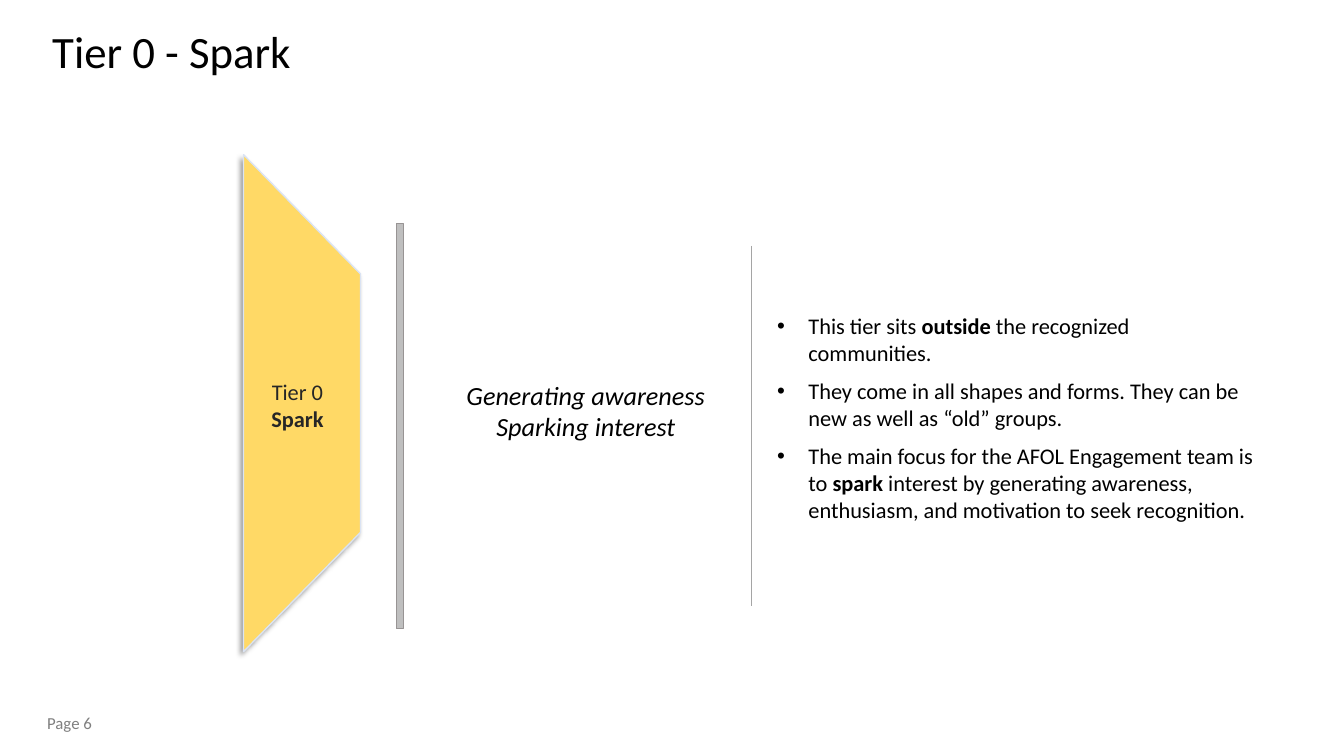
from lxml.etree import SubElement
from pptx import Presentation
from pptx.dml.color import RGBColor
from pptx.enum.shapes import MSO_CONNECTOR as Connector, MSO_SHAPE as Shape
from pptx.enum.text import MSO_ANCHOR as Anchor, PP_ALIGN as Align
from pptx.oxml.ns import qn
from pptx.util import Pt

EMU_PER_PX = 9144


def px(*lengths):
    return [length * EMU_PER_PX for length in lengths]


def colour(code):
    return RGBColor.from_string(code)


class Slide:
    font = "Calibri"
    ink = "000000"

    def __init__(self, deck):
        self.page = deck.slides.add_slide(deck.slide_layouts[6])

    def text(self, place, paras, size, ink=ink, align=Align.LEFT, anchor=Anchor.TOP,
             italic=False, bullet=None, gap=0, spacing=None):
        box = self.page.shapes.add_textbox(*px(*place))
        frame = box.text_frame
        frame.word_wrap = True
        frame.vertical_anchor = anchor
        for index, spans in enumerate(paras):
            para = frame.add_paragraph() if index else frame.paragraphs[0]
            para.alignment = align
            para.line_spacing = spacing
            if index:
                para.space_before = Pt(gap)
            if bullet:
                self.bullet(para, bullet)
            para.font.name = self.font
            para.font.size = Pt(size)
            para.font.italic = italic
            para.font.color.rgb = colour(ink)
            for order, words in enumerate(spans):
                if words == "\n":
                    para.add_line_break()
                    continue
                span = para.add_run()
                span.text = words
                if order % 2:
                    span.font.bold = True

    def bullet(self, para, mark):
        properties = para._p.get_or_add_pPr()
        indent, = px(31)
        properties.set("marL", str(indent))
        properties.set("indent", str(-indent))
        SubElement(properties, qn("a:buFont"), typeface="Arial")
        SubElement(properties, qn("a:buChar"), char=mark)

    def shape(self, kind, place, fill, line, width):
        shape = self.page.shapes.add_shape(kind, *px(*place))
        shape.shadow.inherit = False
        shape.fill.solid()
        shape.fill.fore_color.rgb = colour(fill)
        shape.line.color.rgb = colour(line)
        shape.line.width = Pt(width)
        return shape

    def shadow(self, shape, ink, opacity, blur, distance, angle):
        effects = shape._element.spPr.find(qn("a:effectLst"))
        outer = SubElement(effects, qn("a:outerShdw"), blurRad=str(Pt(blur)),
                           dist=str(Pt(distance)), dir=str(angle * 60000),
                           algn="tr", rotWithShape="0")
        tint = SubElement(outer, qn("a:srgbClr"), val=ink)
        SubElement(tint, qn("a:alpha"), val=str(opacity * 1000))

    def line(self, ends, ink, width):
        line = self.page.shapes.add_connector(Connector.STRAIGHT, *px(*ends))
        line.line.color.rgb = colour(ink)
        line.line.width = Pt(width)
        SubElement(line._element.spPr, qn("a:effectLst"))


def main():
    deck = Presentation()
    deck.slide_width, deck.slide_height = px(1333, 750)
    slide = Slide(deck)

    slide.text((42, 9, 1150, 89), [["Tier 0 - Spark"]], 32,
               anchor=Anchor.MIDDLE, spacing=0.9)
    slide.text((761, 305, 492, 259), [
        ["This tier sits ", "outside", " the recognized communities."],
        ["They come in all shapes and forms. They can be new as well as “old” groups."],
        ["The main focus for the AFOL Engagement team is to ", "spark",
         " interest by generating awareness, enthusiasm, and motivation to seek recognition."],
    ], 16, bullet="•", gap=8)
    slide.text((22, 702, 79, 30), [["Page 6"]], 12, "7F7F7F", Align.RIGHT, Anchor.MIDDLE)

    tier = slide.shape(Shape.TRAPEZOID, (53, 342, 493, 116), "FFD966", "DAE3F3", 1)
    tier.rotation = 90
    tier.adjustments[0] = 1.02
    slide.shadow(tier, "000000", 40, 4, 3, 135)
    slide.shape(Shape.RECTANGLE, (393, 222, 7, 402), "BFBFBF", "989494", 0.75)

    slide.text((217, 370, 156, 64), [["Tier 0", "\n", "", "Spark"]], 16, "262626", Align.CENTER)
    slide.line((745, 244, 745, 601), "A5A5A5", 0.5)
    slide.text((437, 371, 288, 73), [["Generating awareness"], ["Sparking interest"]], 18.7,
               align=Align.CENTER, italic=True)

    deck.save("out.pptx")


if __name__ == "__main__":
    main()
